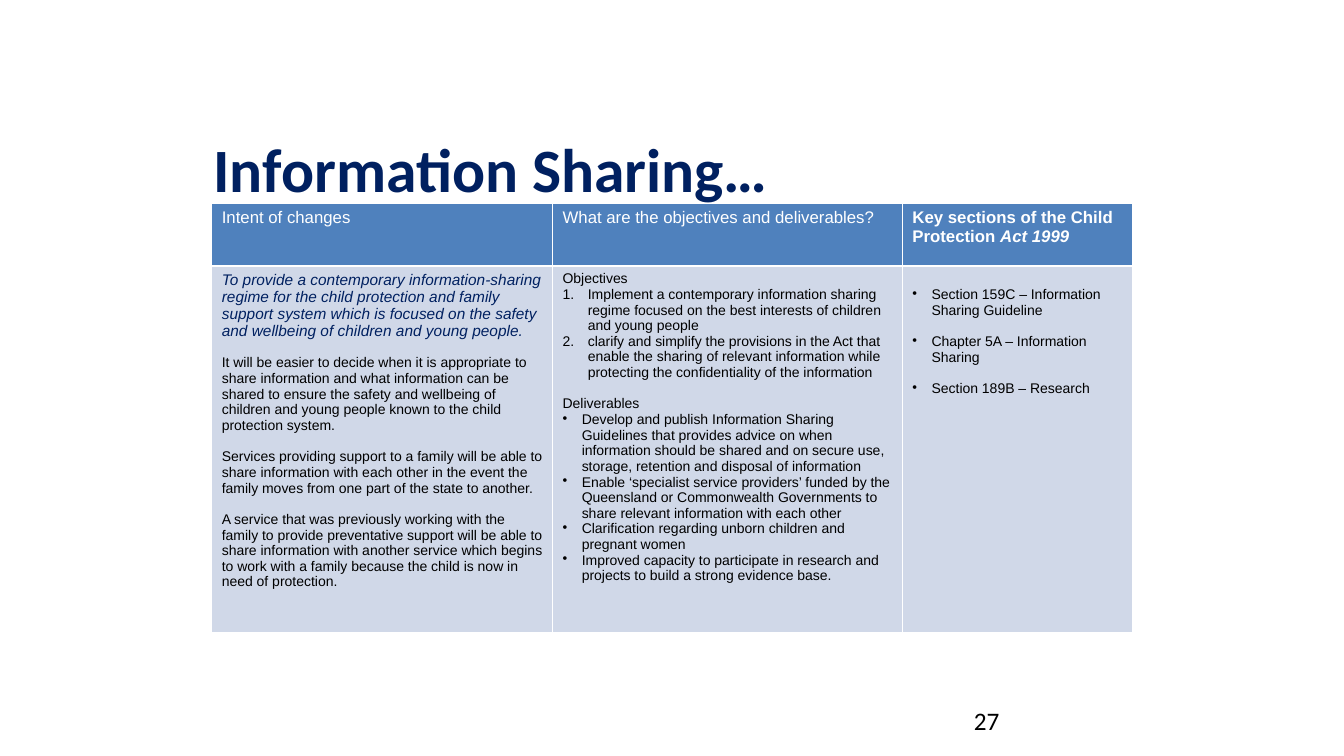
from dataclasses import dataclass
from lxml.etree import SubElement
from pptx import Presentation
from pptx.dml.color import RGBColor
from pptx.enum.text import MSO_ANCHOR
from pptx.oxml.ns import qn
from pptx.util import Inches, Pt


@dataclass(frozen=True)
class Theme:
    navy: str = "002060"
    blue: str = "4F81BD"
    pale: str = "D0D8E8"
    white: str = "FFFFFF"
    black: str = "000000"
    title: int = 44
    page: int = 18
    head: int = 12
    lead: int = 11
    body: int = 10


theme = Theme()


def style(para, size, color, face="Arial", bold=False, italic=False):
    font = para.font
    font.name, font.size = face, Pt(size)
    font.bold, font.italic = bold, italic
    font.color.rgb = RGBColor.from_string(color)


def label(left, top, width, height, text, size, color, bold, anchor):
    frame = slide.shapes.add_textbox(Inches(left), Inches(top), Inches(width), Inches(height)).text_frame
    frame.word_wrap = True
    frame.vertical_anchor = anchor
    para = frame.paragraphs[0]
    para.text = text
    style(para, size, color, "Calibri", bold)


deck = Presentation()
deck.slide_width, deck.slide_height = Inches(13.33), Inches(7.5)
slide = deck.slides.add_slide(deck.slide_layouts[6])

widths = [3.38, 3.47, 2.28]
heights = [0.62, 3.64]
table = slide.shapes.add_table(2, 3, Inches(2.1), Inches(2.02), Inches(sum(widths)), Inches(sum(heights))).table
for column, width in zip(table.columns, widths):
    column.width = Inches(width)
for row, height in zip(table.rows, heights):
    row.height = Inches(height)

for row, fill in zip(table.rows, [theme.blue, theme.pale]):
    for cell in row.cells:
        props = cell._tc.get_or_add_tcPr()
        for side in ["lnL", "lnR", "lnT", "lnB"]:
            line = SubElement(props, qn(f"a:{side}"), w=str(Pt(1)))
            SubElement(SubElement(line, qn("a:solidFill")), qn("a:srgbClr"), val=theme.white)
        cell.fill.solid()
        cell.fill.fore_color.rgb = RGBColor.from_string(fill)

heads = [
    ["Intent of changes"],
    ["What are the objectives and deliverables?"],
    ["Key sections of the Child Protection ", "Act 1999"],
]
for cell, parts in zip(table.rows[0].cells, heads):
    para = cell.text_frame.paragraphs[0]
    for part in parts:
        run = para.add_run()
        run.text = part
    style(para, theme.head, theme.white, bold=len(parts) > 1)
    if len(parts) > 1:
        run.font.italic = True

bodies = [
    [
        ("lead", 0, "To provide a contemporary information-sharing regime for the child protection and family support system which is focused on the safety and wellbeing of children and young people."),
        ("plain", 1, "It will be easier to decide when it is appropriate to share information and what information can be shared to ensure the safety and wellbeing of children and young people known to the child protection system."),
        ("plain", 1, "Services providing support to a family will be able to share information with each other in the event the family moves from one part of the state to another."),
        ("plain", 1, "A service that was previously working with the family to provide preventative support will be able to share information with another service which begins to work with a family because the child is now in need of protection."),
    ],
    [
        ("plain", 0, "Objectives"),
        ("number", 0, "Implement a contemporary information sharing regime focused on the best interests of children and young people"),
        ("number", 0, "clarify and simplify the provisions in the Act that enable the sharing of relevant information while protecting the confidentiality of the information"),
        ("plain", 1, "Deliverables"),
        ("bullet", 0, "Develop and publish Information Sharing Guidelines that provides advice on when information should be shared and on secure use, storage, retention and disposal of information"),
        ("bullet", 0, "Enable ‘specialist service providers’ funded by the Queensland or Commonwealth Governments to share relevant information with each other"),
        ("bullet", 0, "Clarification regarding unborn children and pregnant women"),
        ("bullet", 0, "Improved capacity to participate in research and projects to build a strong evidence base."),
    ],
    [
        ("bullet", 0, "Section 159C – Information Sharing Guideline"),
        ("bullet", 1, "Chapter 5A – Information Sharing"),
        ("bullet", 1, "Section 189B – Research"),
    ],
]
marks = {
    "number": (0.25, "a:buAutoNum", {"type": "arabicPeriod"}),
    "bullet": (0.19, "a:buChar", {"char": "•"}),
}
for cell, items in zip(table.rows[1].cells, bodies):
    frame = cell.text_frame
    for index, (kind, gap, text) in enumerate(items):
        para = frame.add_paragraph() if index else frame.paragraphs[0]
        para.text = text
        if kind in marks:
            indent, tag, attrs = marks[kind]
            props = para._p.get_or_add_pPr()
            props.set("marL", str(Inches(indent)))
            props.set("indent", str(-Inches(indent)))
            SubElement(props, qn(tag), attrs)
        if gap:
            para.space_before = Pt(11.2)
        if kind == "lead":
            style(para, theme.lead, theme.navy, italic=True)
        else:
            style(para, theme.body, theme.black)
table.cell(1, 2).margin_top = Inches(0.21)

label(2.02, 1.23, 9.13, 0.87, "Information Sharing…", theme.title, theme.navy, True, MSO_ANCHOR.MIDDLE)
label(9.56, 6.95, 3.11, 0.4, "27", theme.page, theme.black, False, MSO_ANCHOR.TOP)

deck.save("out.pptx")
